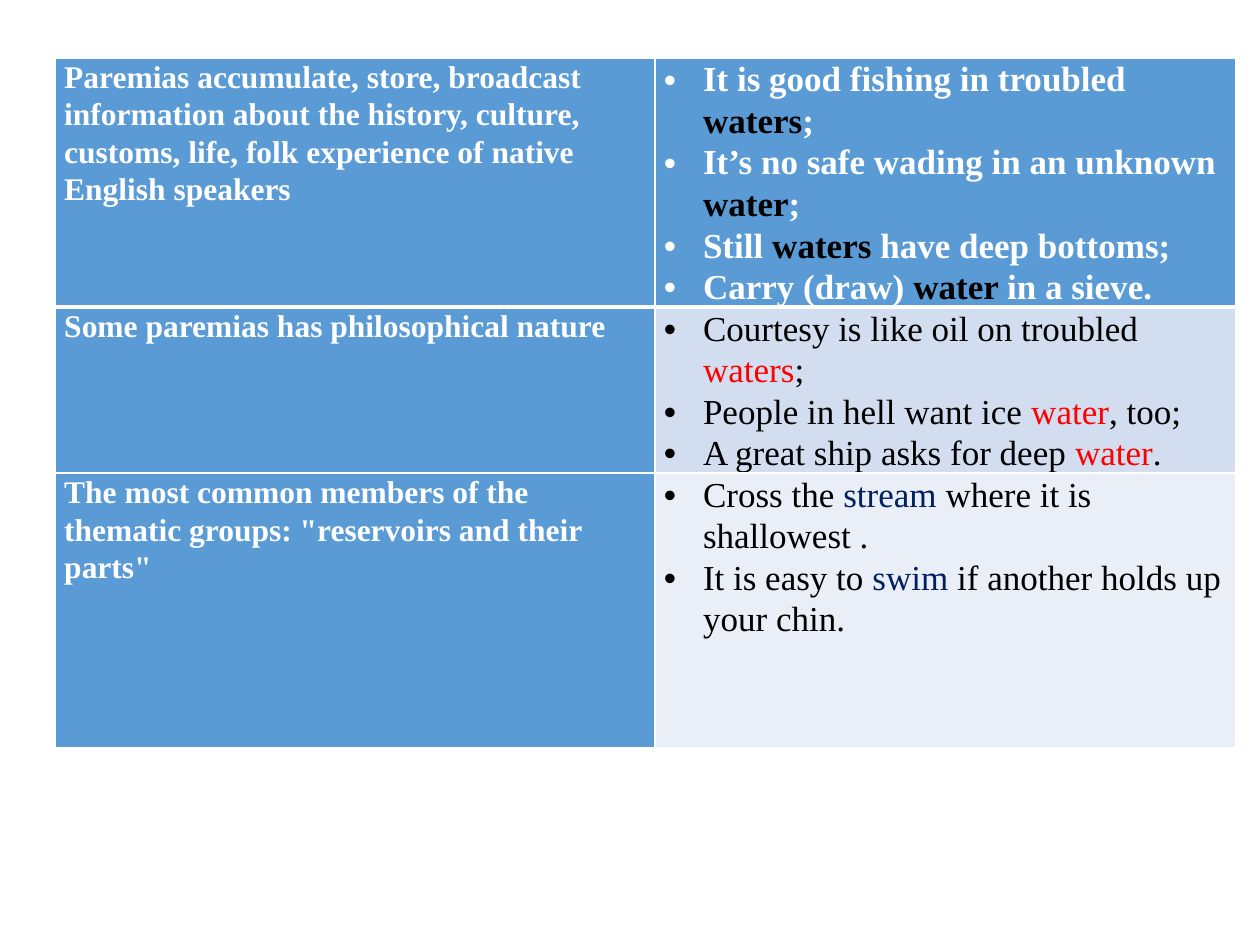
from typing import NamedTuple

from lxml.etree import SubElement
from pptx import Presentation
from pptx.dml.color import RGBColor
from pptx.oxml.ns import qn
from pptx.util import Inches, Pt

FONT = "Times New Roman"
WHITE, BLACK, BLUE = "FFFFFF", "000000", "5B9BD5"
BULLET_INDENT = Inches(0.31)
CELL_FORMAT = {
    "margin_left": Inches(0.07),
    "margin_right": Inches(0.07),
    "margin_top": 0,
    "margin_bottom": 0,
}


class ProverbRow(NamedTuple):
    height: float
    topic: str
    proverbs: list[str]  # key words stand between asterisks
    fill: str
    text_color: str
    key_color: str
    bold: bool
    top_border: int
    bottom_border: int


ROWS = [
    ProverbRow(
        1.74,
        "Paremias accumulate, store, broadcast information about the history, "
        "culture, customs, life, folk experience of native English speakers",
        [
            "It is good fishing in troubled *waters*;",
            "It’s no safe wading in an unknown *water*;",
            "Still *waters *have deep bottoms;",
            "Carry (draw) *water *in a sieve.",
        ],
        BLUE, WHITE, BLACK, True, 1, 3,
    ),
    ProverbRow(
        1.3,
        "Some paremias has philosophical nature",
        [
            "Courtesy is like oil on troubled *waters*;",
            "People in hell want ice *water*, too;",
            "A great ship asks for deep *water*.",
        ],
        "D2DEEF", BLACK, "FF0000", False, 3, 1,
    ),
    ProverbRow(
        2.18,
        'The most common members of the thematic groups: "reservoirs and their parts"',
        [
            "Cross the *stream *where it is shallowest .",
            "It is easy to *swim* if another holds up your chin.",
        ],
        "EAEFF7", BLACK, "002060", False, 1, 1,
    ),
]


def color(value: str) -> RGBColor:
    return RGBColor.from_string(value)


def add_run(paragraph, text: str, size: int, text_color: str, bold: bool) -> None:
    font_format = {"name": FONT, "size": Pt(size), "bold": bold}
    font = paragraph.add_run().font
    for name, value in font_format.items():
        setattr(font, name, value)
    font.color.rgb = color(text_color)
    paragraph.runs[-1].text = text


def add_bullet(paragraph) -> None:
    properties = paragraph._p.get_or_add_pPr()
    properties.set("marL", str(BULLET_INDENT))
    properties.set("indent", str(-BULLET_INDENT))
    SubElement(properties, qn("a:buFont"), typeface="Arial")
    SubElement(properties, qn("a:buChar"), char="•")


def format_cell(cell, fill: str, row: ProverbRow) -> None:
    for name, value in CELL_FORMAT.items():
        setattr(cell, name, value)
    # Borders come before the fill in the cell properties
    properties = cell._tc.get_or_add_tcPr()
    widths = {"lnL": 1, "lnR": 1, "lnT": row.top_border, "lnB": row.bottom_border}
    for edge, width in widths.items():
        line = SubElement(properties, qn(f"a:{edge}"), w=str(Pt(width)))
        line_fill = SubElement(line, qn("a:solidFill"))
        SubElement(line_fill, qn("a:srgbClr"), val=WHITE)
    cell.fill.solid()
    cell.fill.fore_color.rgb = color(fill)


def fill_topic(cell, row: ProverbRow) -> None:
    format_cell(cell, BLUE, row)
    paragraph = cell.text_frame.paragraphs[0]
    paragraph.line_spacing = 1.07
    add_run(paragraph, row.topic, 18, WHITE, True)


def fill_proverbs(cell, row: ProverbRow) -> None:
    format_cell(cell, row.fill, row)
    text_frame = cell.text_frame
    for index, proverb in enumerate(row.proverbs):
        paragraph = text_frame.add_paragraph() if index else text_frame.paragraphs[0]
        paragraph.line_spacing = 1.07
        add_bullet(paragraph)
        for part, text in enumerate(proverb.split("*")):
            text_color = row.key_color if part % 2 else row.text_color
            add_run(paragraph, text, 20, text_color, row.bold)


def main() -> None:
    presentation = Presentation()
    presentation.slide_width, presentation.slide_height = Inches(10), Inches(7.5)
    slide = presentation.slides.add_slide(presentation.slide_layouts[6])

    # Table of topics and proverbs
    height = sum(row.height for row in ROWS)
    table = slide.shapes.add_table(
        len(ROWS), 2, Inches(0.44), Inches(0.46), Inches(9.37), Inches(height)
    ).table
    for column, width in zip(table.columns, (4.76, 4.61)):
        column.width = Inches(width)
    for index, row in enumerate(ROWS):
        table.rows[index].height = Inches(row.height)
        fill_topic(table.cell(index, 0), row)
        fill_proverbs(table.cell(index, 1), row)

    presentation.save("out.pptx")


if __name__ == "__main__":
    main()
